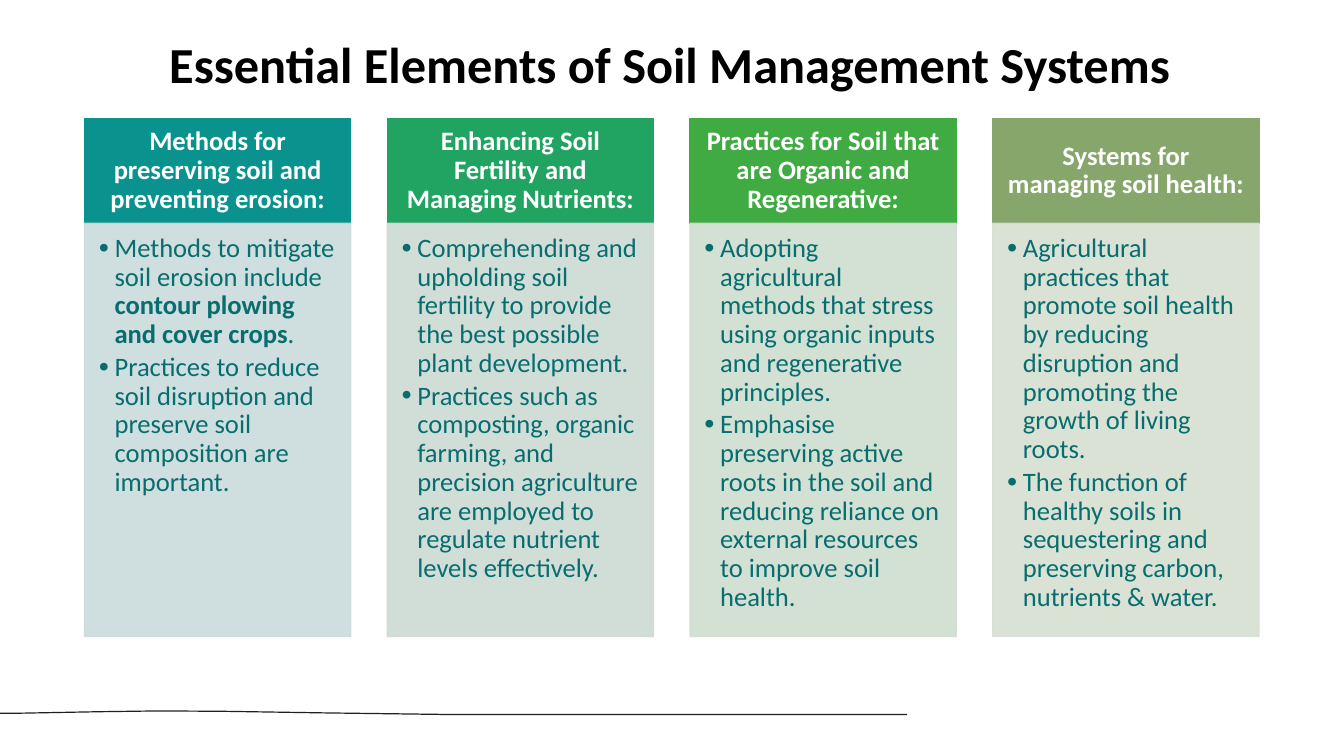
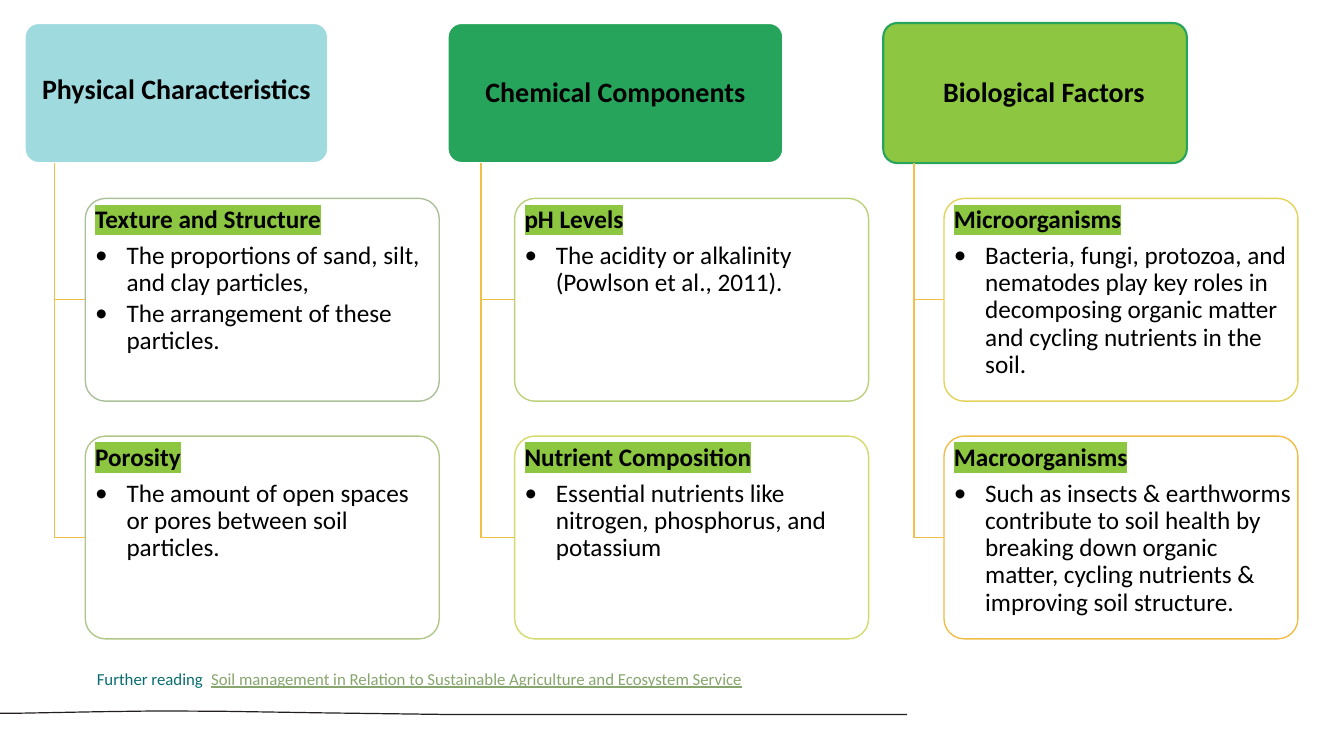
from dataclasses import dataclass

import pptx
import pptx.dml.color
import pptx.enum.shapes
import pptx.enum.text
import pptx.oxml
import pptx.oxml.ns
import pptx.util
from pptx.util import Cm

SHAPE = pptx.enum.shapes.MSO_SHAPE
ALIGN = pptx.enum.text.PP_ALIGN
ANCHOR = pptx.enum.text.MSO_ANCHOR


# Theme
@dataclass(frozen=True)
class Theme:
    font: str = "Calibri"
    black: str = "000000"
    white: str = "FFFFFF"
    teal: str = "086D6E"
    ink: str = "231F20"
    link: str = "87A66E"
    lime: str = "8DC641"
    leaf: str = "26A45B"
    aqua: str = "9FDADF"
    gold: str = "EFBF47"
    title: float = 36
    head: float = 20
    panel: float = 19
    card: float = 18
    note: float = 12


THEME = Theme()


# Content
@dataclass(frozen=True)
class Panel:
    head: str
    dark: str
    pale: str
    points: tuple[str, ...]  # text between asterisks is bold


@dataclass(frozen=True)
class Card:
    head: str
    edge: str
    points: tuple[str, ...]
    right: float = 0.1


@dataclass(frozen=True)
class Branch:
    head: str
    fill: str
    edge: str
    left: float
    width: float
    trunk: float
    pads: tuple[float, float, float, float]
    cards: tuple[Card, ...]


PANELS = (
    Panel("Methods for preserving soil and preventing erosion:", "0A938E", "CADBDB", (
        "Methods to mitigate soil erosion include *contour plowing and cover crops*.",
        "Practices to reduce soil disruption and preserve soil composition are important.")),
    Panel("Enhancing Soil Fertility and Managing Nutrients:", "21A362", "CCDBD4", (
        "Comprehending and upholding soil fertility to provide the best possible "
        "plant development.",
        "Practices such as composting, organic farming, and precision agriculture "
        "are employed to regulate nutrient levels effectively.")),
    Panel("Practices for Soil that are Organic and Regenerative:", "40AB43", "CFDDD0", (
        "Adopting agricultural methods that stress using organic inputs and "
        "regenerative principles.",
        "Emphasise preserving active roots in the soil and reducing reliance on "
        "external resources to improve soil health.")),
    Panel("Systems for managing soil health:", "86A66B", "D6DFD2", (
        "Agricultural practices that promote soil health by reducing disruption and "
        "promoting the growth of living roots.",
        "The function of healthy soils in sequestering and preserving carbon, "
        "nutrients & water.")),
)

BRANCHES = (
    Branch("Physical Characteristics", THEME.aqua, THEME.white, 0.62, 7.65, 1.38,
           (0.1, 0.05, 0.1, 0.2), (
        Card("Texture and Structure", "ACC199", (
            "The proportions of sand, silt, and clay particles,",
            "The arrangement of these particles.")),
        Card("Porosity", "B1C78A", (
            "The amount of open spaces or pores between soil particles.",)))),
    Branch("Chemical Components", THEME.leaf, THEME.white, 11.28, 8.46, 12.12,
           (0.1, 0.05, 0.1, 0.05), (
        Card("pH Levels", "BDD07B", (
            "The acidity or alkalinity (Powlson et al., 2011).",)),
        Card("Nutrient Composition", "D4DA6B", (
            "Essential nutrients like nitrogen, phosphorus, and potassium",)))),
    Branch("Biological Factors", THEME.lime, THEME.leaf, 22.26, 7.65, 23.03,
           (0.55, 0.05, 0.1, 0.05), (
        Card("Microorganisms", "E4D25A", (
            "Bacteria, fungi, protozoa, and nematodes play key roles in decomposing "
            "organic matter and cycling nutrients in the soil.",)),
        Card("Macroorganisms", "EFBD48", (
            "Such as insects & earthworms contribute to soil health by breaking down "
            "organic matter, cycling nutrients & improving soil structure.",), 0))),
)


# Helpers
def rgb(code: str) -> pptx.dml.color.RGBColor:
    return pptx.dml.color.RGBColor.from_string(code)


def node(home, tag: str, **attrs: str):
    """Append a drawing element and return it."""
    item = pptx.oxml.parse_xml(f"<a:{tag} {pptx.oxml.ns.nsdecls('a')}/>")
    for name, value in attrs.items():
        item.set(name, value)
    home.append(item)
    return item


def style(run, size: float, tint: str, bold: bool = False) -> None:
    run.font.name = THEME.font
    run.font.size = pptx.util.Pt(size)
    run.font.bold = bold
    run.font.color.rgb = rgb(tint)


def mark(run, tint: str) -> None:
    """Highlight a run that already has its colour."""
    props = run._r.get_or_add_rPr()
    light = node(props, "highlight")
    node(light, "srgbClr", val=tint)
    props.find(pptx.oxml.ns.qn("a:solidFill")).addnext(light)


def write(par, text: str, size: float, tint: str, bold: bool = False) -> None:
    first, *rest = text.split("*")
    par.text = first
    for part in rest:
        par.add_run().text = part
    for i, run in enumerate(par.runs):
        style(run, size, tint, bold or i % 2 == 1)
    par.line_spacing = 0.9


def bullet(par, sign: str, hang: float, tint: str) -> None:
    props = par._p.get_or_add_pPr()
    props.set("marL", str(Cm(hang)))
    props.set("indent", str(-Cm(hang)))
    node(node(props, "buClr"), "srgbClr", val=tint)
    node(props, "buFont", typeface=THEME.font)
    node(props, "buChar", char=sign)


def frame(shape, pads: tuple[float, ...], anchor):
    box = shape.text_frame
    box.word_wrap = True
    box.vertical_anchor = anchor
    box.margin_left, box.margin_top, box.margin_right, box.margin_bottom = map(Cm, pads)
    return box


def block(slide, kind, area: tuple[float, ...], fill: str, edge: str,
          width: float = 1, clear: bool = False):
    shape = slide.shapes.add_shape(kind, *map(Cm, area))
    shape.shadow.inherit = False
    shape.fill.solid()
    shape.fill.fore_color.rgb = rgb(fill)
    shape.line.color.rgb = rgb(edge)
    shape.line.width = pptx.util.Pt(width)
    if kind == SHAPE.ROUNDED_RECTANGLE:
        shape.adjustments[0] = 0.1
    if clear:
        for tone in shape._element.spPr.iter(pptx.oxml.ns.qn("a:srgbClr")):
            if tone.get("val") == fill:
                node(tone, "alpha", val="90000")
    return shape


def label(shape, text: str, size: float, tint: str, pads: tuple[float, ...]) -> None:
    par = frame(shape, pads, ANCHOR.MIDDLE).paragraphs[0]
    write(par, text, size, tint, True)
    par.alignment = ALIGN.CENTER


def trace(slide, spots: list[tuple[float, float]], close: bool):
    """Draw an outline through the given points."""
    pen = slide.shapes.build_freeform(*map(Cm, spots[0]))
    pen.add_line_segments([(Cm(x), Cm(y)) for x, y in spots[1:]], close=close)
    shape = pen.convert_to_shape()
    shape.shadow.inherit = False
    return shape


def elbow(slide, x: float, top: float, end: float, low: float) -> None:
    shape = trace(slide, [(x, top), (x, low), (end, low)], False)
    shape.fill.background()
    shape.line.color.rgb = rgb(THEME.gold)
    shape.line.width = pptx.util.Pt(1)


# Shared wavy band, kept on the slide master
def wave(prs, slide) -> None:
    crest = [(0, 17.96), (0.36, 17.96), (2.5, 17.92), (4, 17.9), (5.66, 17.91),
             (8.2, 17.95), (11.25, 17.99), (22.86, 17.99)]
    base = [(x, y + 0.03) for x, y in reversed(crest)]
    band = trace(slide, crest + base, True)
    band.fill.solid()
    band.fill.fore_color.rgb = rgb(THEME.ink)
    band.line.fill.background()
    band._element.nvSpPr.cNvPr.set("id", "90")
    prs.slide_master.shapes._spTree.append(band._element)


# Slide 1: four panels
def panel(slide, item: Panel, left: float) -> None:
    top, wide, tall = 2.99, 6.71, 2.64
    head = block(slide, SHAPE.RECTANGLE, (left, top, wide, tall), item.dark, item.dark)
    label(head, item.head, THEME.panel, THEME.white, (0.38, 0.2, 0.38, 0.2))
    body = block(slide, SHAPE.RECTANGLE, (left, top + tall, wide, 10.41),
                 item.pale, item.pale, clear=True)
    box = frame(body, (0.28, 0.28, 0.38, 0.43), ANCHOR.TOP)
    for i, text in enumerate(item.points):
        par = box.add_paragraph() if i else box.paragraphs[0]
        bullet(par, "∙", 0.48, THEME.teal)
        write(par, text, THEME.panel, THEME.teal)
        par.alignment = ALIGN.LEFT
        if i:
            par.space_before = pptx.util.Pt(2.9)


def systems(slide) -> None:
    title = slide.shapes.title
    title.left, title.top, title.width, title.height = map(Cm, (1.86, 0.69, 30.05, 1.8))
    label(title, "Essential Elements of Soil Management Systems",
          THEME.title, THEME.black, (0.25, 0.13, 0.25, 0.13))
    title.text_frame.paragraphs[0].line_spacing = 1.0
    for i, item in enumerate(PANELS):
        panel(slide, item, 2.13 + 7.63 * i)


# Slide 2: three branches of cards
def leaflet(slide, item: Card, left: float, top: float) -> None:
    shape = block(slide, SHAPE.ROUNDED_RECTANGLE, (left, top, 8.92, 5.11),
                  THEME.white, item.edge, clear=True)
    box = frame(shape, (0.1, 0.06, item.right, 0.05), ANCHOR.TOP)
    head = box.paragraphs[0]
    write(head, item.head, THEME.card, THEME.black, True)
    head.alignment = ALIGN.LEFT
    mark(head.runs[0], THEME.lime)
    for i, text in enumerate(item.points):
        par = box.add_paragraph()
        bullet(par, "•", 0.79, THEME.black)
        write(par, text, THEME.card, THEME.black)
        par.alignment = ALIGN.LEFT
        par.space_before = pptx.util.Pt(2.7 if i else 6.3)


def branch(slide, item: Branch, left: float) -> None:
    top, tall, first, step, half = 0.58, 3.53, 5, 5.99, 2.55
    head = block(slide, SHAPE.ROUNDED_RECTANGLE, (item.left, top, item.width, tall),
                 item.fill, item.edge, 1.5)
    label(head, item.head, THEME.head, THEME.black, item.pads)
    for i, card in enumerate(item.cards):
        y = first + step * i
        elbow(slide, item.trunk, top + tall, left, y + half)
        leaflet(slide, card, left, y)


def source(slide) -> None:
    note = slide.shapes.add_textbox(*map(Cm, (1.32, 16.07, 20.93, 2.11)))
    par = frame(note, (1.12, 0.05, 0.05, 0.05), ANCHOR.MIDDLE).paragraphs[0]
    tabs = node(par._p.get_or_add_pPr(), "tabLst")
    node(tabs, "tab", pos=str(Cm(2.88)), algn="l")
    write(par, "Further reading\t", THEME.note, THEME.teal)
    link = par.add_run()
    link.text = "Soil management in Relation to Sustainable Agriculture and Ecosystem Service"
    style(link, THEME.note, THEME.link)
    link.font.underline = True


def factors(slide) -> None:
    for i, item in enumerate(BRANCHES):
        branch(slide, item, 2.15 + 10.82 * i)
    source(slide)


def main() -> None:
    prs = pptx.Presentation()
    prs.slide_width, prs.slide_height = Cm(33.87), Cm(19.05)
    first = prs.slides.add_slide(prs.slide_layouts[5])
    wave(prs, first)
    systems(first)
    factors(prs.slides.add_slide(prs.slide_layouts[6]))
    prs.save("out.pptx")


if __name__ == "__main__":
    main()
